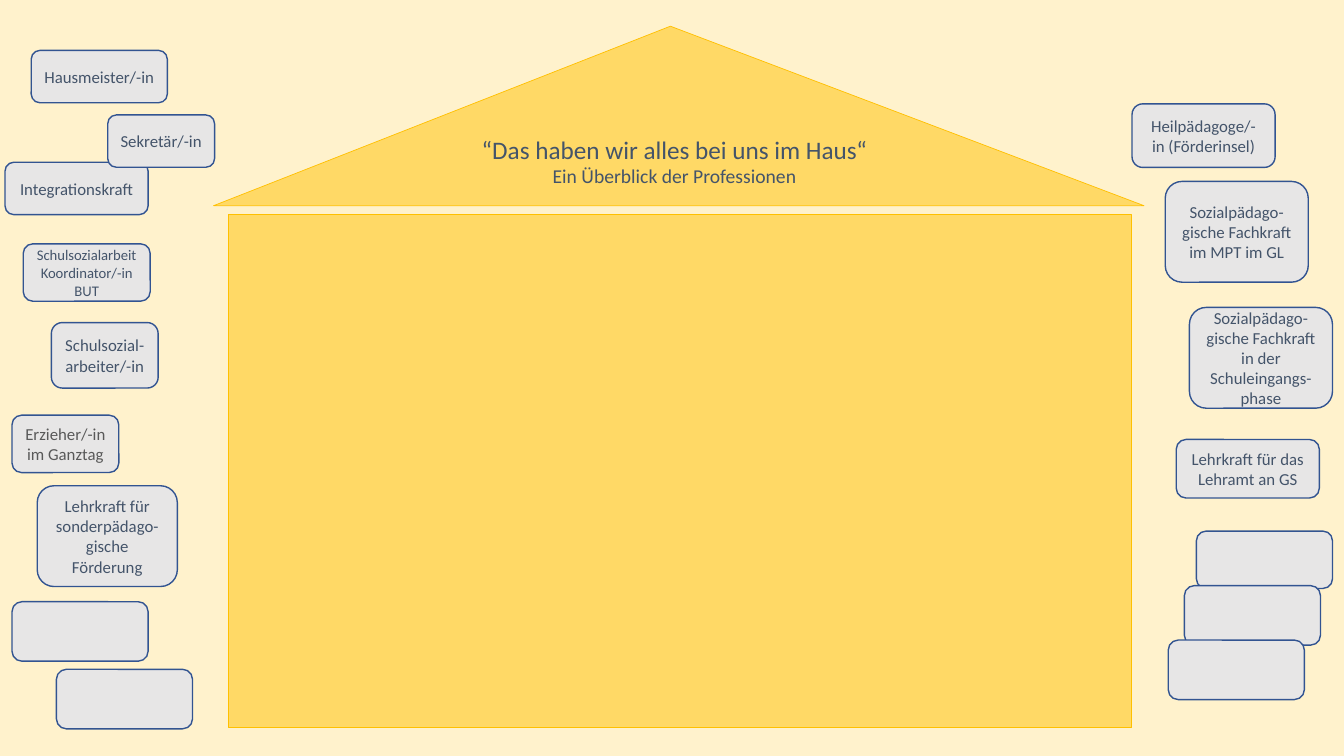
from dataclasses import dataclass

from pptx import Presentation
from pptx.dml.color import RGBColor
from pptx.enum.shapes import MSO_SHAPE as Shape
from pptx.enum.text import MSO_ANCHOR as Anchor, PP_ALIGN as Align
from pptx.util import Pt

COLORS = {
    "background": "FFF2CC",
    "house": "FFD966",
    "house_line": "FFC000",
    "card": "E7E6E6",
    "card_line": "325491",
    "text": "44546A",
    "gray_text": "595959",
}
FONT = "Calibri"


@dataclass(frozen=True)
class Card:
    left: float
    top: float
    width: float
    height: float
    lines: tuple[str, ...] = ()
    size: float = 12
    color: str = "text"


# Cards from back to front
CARDS = [
    Card(8.6, 296.6, 76.3, 41, ("Erzieher/-in im Ganztag",), color="gray_text"),
    Card(3.6, 115.9, 102.2, 37.4, ("Integrationskraft",)),
    Card(77, 82.1, 76.3, 37.4, ("Sekretär/-in",)),
    Card(36.7, 230.4, 76.3, 46.8, ("Schulsozial-arbeiter/-in",)),
    Card(16.6, 174.2, 90.7, 41, ("Schulsozialarbeit Koordinator/-in BUT",), size=10.5),
    Card(22.3, 36, 97.2, 37.4, ("Hausmeister/-in",)),
    Card(832.3, 129.6, 102.2, 72, ("Sozialpädago-", "gische Fachkraft im MPT im GL")),
    Card(840.2, 313.9, 102.2, 41.8, ("Lehrkraft für das Lehramt an GS",)),
    Card(26.6, 347, 100.1, 72, ("Lehrkraft für sonderpädago-", "gische Förderung")),
    Card(808.6, 74.2, 102.2, 45.4, ("Heilpädagoge/-in (Förderinsel)",)),
    Card(849.6, 219.6, 102.2, 72,
         ("Sozialpädago-", "gische Fachkraft in der Schuleingangs-", "phase")),
    # Empty cards to fill in
    Card(854.6, 379.4, 97.2, 41),
    Card(846, 418.3, 97.2, 42.5),
    Card(834.5, 457.2, 97.2, 42.5),
    Card(8.6, 429.8, 97.2, 42.5),
    Card(40.3, 478.1, 97.2, 42.5),
]


def rgb(name: str) -> RGBColor:
    return RGBColor.from_string(COLORS[name])


def add_shape(slide, kind: Shape, left: float, top: float, width: float, height: float,
              *, fill: str, line: str, line_width: float):
    shape = slide.shapes.add_shape(kind, Pt(left), Pt(top), Pt(width), Pt(height))
    shape.shadow.inherit = False
    shape.fill.solid()
    shape.fill.fore_color.rgb = rgb(fill)
    shape.line.color.rgb = rgb(line)
    shape.line.width = Pt(line_width)
    return shape


def add_text(shape, text: str, *, size: float, color: str = "text", first: bool = True) -> None:
    frame = shape.text_frame
    frame.word_wrap = True
    frame.vertical_anchor = Anchor.MIDDLE
    paragraph = frame.paragraphs[0] if first else frame.add_paragraph()
    paragraph.alignment = Align.CENTER
    run = paragraph.add_run()
    run.text = text
    run.font.name = FONT
    run.font.size = Pt(size)
    run.font.color.rgb = rgb(color)


def add_house(slide) -> None:
    style = dict(fill="house", line="house_line", line_width=0.5)
    add_shape(slide, Shape.RECTANGLE, 163.4, 153.4, 645.1, 366.5, **style)
    roof = add_shape(slide, Shape.ISOSCELES_TRIANGLE, 152.6, 18.7, 664.6, 128.2, **style)
    roof.adjustments[0] = 0.491
    add_text(roof, "“Das haben wir alles bei uns im Haus“", size=18)
    add_text(roof, "Ein Überblick der Professionen", size=14, first=False)


def add_card(slide, card: Card) -> None:
    shape = add_shape(slide, Shape.ROUNDED_RECTANGLE, card.left, card.top, card.width,
                      card.height, fill="card", line="card_line", line_width=1)
    for index, line in enumerate(card.lines):
        add_text(shape, line, size=card.size, color=card.color, first=index == 0)


def main() -> None:
    presentation = Presentation()
    presentation.slide_width = Pt(960)
    presentation.slide_height = Pt(540)
    slide = presentation.slides.add_slide(presentation.slide_layouts[6])
    slide.background.fill.solid()
    slide.background.fill.fore_color.rgb = rgb("background")

    # House with title in the roof
    add_house(slide)

    # Professions around the house
    for card in CARDS:
        add_card(slide, card)

    presentation.save("out.pptx")


if __name__ == "__main__":
    main()
